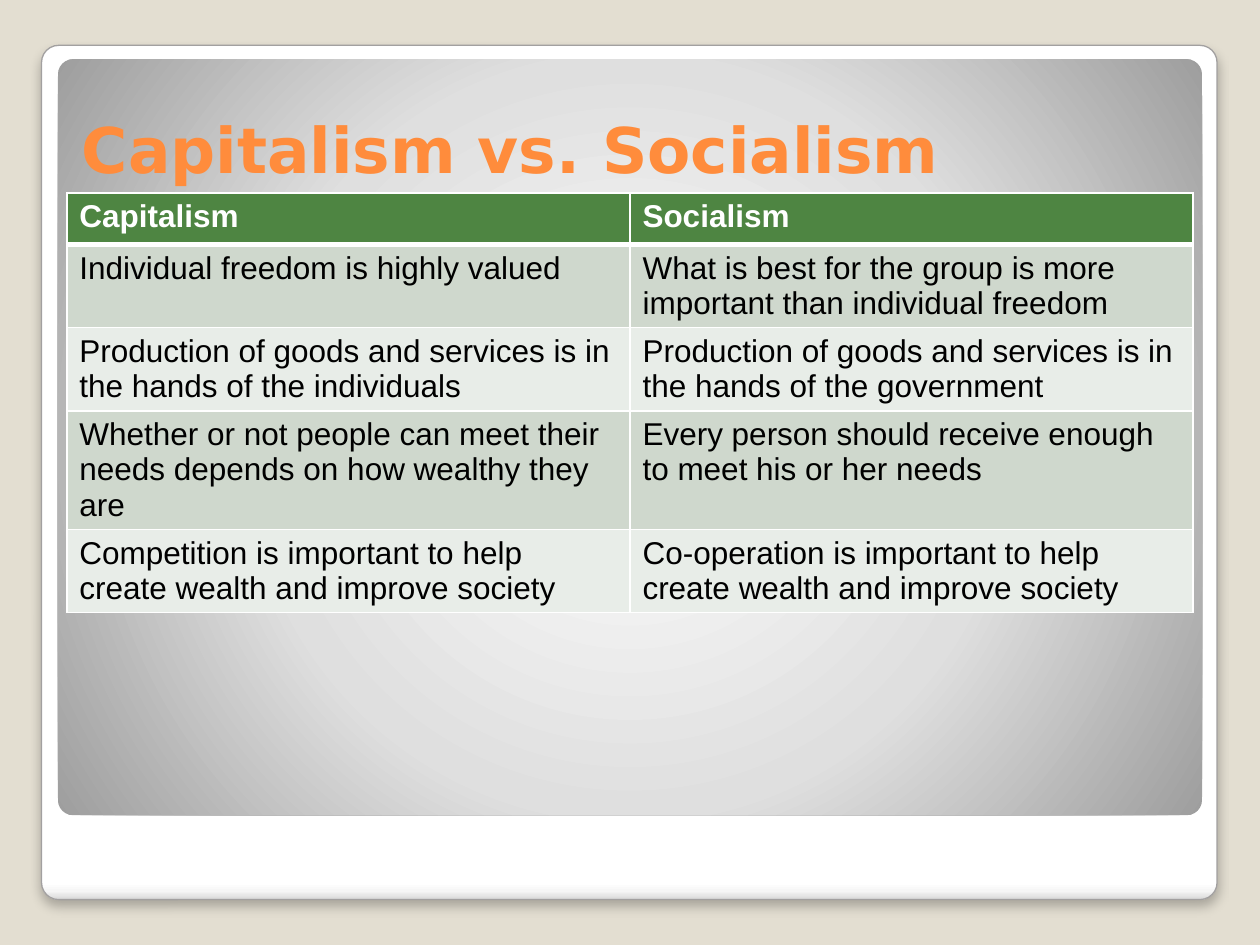
from lxml.etree import SubElement
from pptx import Presentation
from pptx.dml.color import RGBColor
from pptx.enum.shapes import MSO_SHAPE
from pptx.enum.text import MSO_ANCHOR, MSO_AUTO_SIZE, PP_ALIGN
from pptx.oxml.ns import qn
from pptx.util import Inches, Pt

BACKGROUND = RGBColor(0xE3, 0xDE, 0xD1)
FRAME_LINE = RGBColor(0xA2, 0xA0, 0xA0)
ORANGE = RGBColor(0xFF, 0x8C, 0x3C)
GREEN = RGBColor(0x4E, 0x85, 0x42)
DARK_BAND = RGBColor(0xCF, 0xD8, 0xCD)
LIGHT_BAND = RGBColor(0xE8, 0xED, 0xE8)
WHITE = RGBColor(0xFF, 0xFF, 0xFF)
BLACK = RGBColor(0, 0, 0)

TITLE = "Capitalism vs. Socialism"
ROWS = [
    ("Capitalism", "Socialism"),
    ("Individual freedom is highly valued",
     "What is best for the group is more important than individual freedom"),
    ("Production of goods and services is in the hands of the individuals",
     "Production of goods and services is in the hands of the government"),
    ("Whether or not people can meet their needs depends on how wealthy they are",
     "Every person should receive enough to meet his or her needs"),
    ("Competition is important to help create wealth and improve society",
     "Co-operation is important to help create wealth and improve society"),
]
FRAME_STOPS = [(0, "FFFFFF"), (98, "FFFFFF"), (99, "F6F6F6"), (100, "D8D8D8")]
PANEL_STOPS = [(0, "FFFFFF"), (55, "DFDFDF"), (100, "9E9E9E")]
COLUMN_WIDTH, ROW_HEIGHT = 4.47, 0.41


def add_element(parent, tag, **attributes):
    return SubElement(parent, qn(tag), {k: str(v) for k, v in attributes.items()})


def add_rounded_panel(slide, box, stops, radial=False):
    shape = slide.shapes.add_shape(MSO_SHAPE.ROUNDED_RECTANGLE, *map(Inches, box))
    shape.adjustments[0] = 0.02
    shape.shadow.inherit = False
    shape.line.fill.background()
    shape.fill.background()
    properties = shape._element.spPr
    gradient = add_element(properties, "a:gradFill", rotWithShape=1)
    properties.replace(properties.find(qn("a:noFill")), gradient)
    stop_list = add_element(gradient, "a:gsLst")
    for position, color in stops:
        stop = add_element(stop_list, "a:gs", pos=position * 1000)
        add_element(stop, "a:srgbClr", val=color)
    if radial:
        circle = add_element(gradient, "a:path", path="circle")
        add_element(circle, "a:fillToRect", **dict.fromkeys("ltrb", 50000))
    else:
        add_element(gradient, "a:lin", ang=90 * 60000, scaled=0)
    return shape


def add_drop_shadow(shape):
    effects = shape._element.spPr.find(qn("a:effectLst"))
    shadow = add_element(effects, "a:outerShdw", blurRad=Pt(6), dist=Pt(4),
                         dir=90 * 60000, algn="tl", rotWithShape=0)
    color = add_element(shadow, "a:srgbClr", val="000000")
    add_element(color, "a:alpha", val=25000)


def add_text(paragraph, text, font, size, color, bold):
    run = paragraph.add_run()
    run.text = text
    run.font.name = font
    run.font.size = Pt(size)
    run.font.color.rgb = color
    run.font.bold = bold


def set_borders(cell, widths):
    properties = cell._tc.get_or_add_tcPr()
    for index, (side, width) in enumerate(widths.items()):
        line = add_element(properties, f"a:ln{side}", w=Pt(width))
        fill = add_element(line, "a:solidFill")
        add_element(fill, "a:srgbClr", val=WHITE)
        properties.insert(index, line)


presentation = Presentation()
presentation.slide_width, presentation.slide_height = Inches(10), Inches(7.5)
slide = presentation.slides.add_slide(presentation.slide_layouts[5])
slide.background.fill.solid()
slide.background.fill.fore_color.rgb = BACKGROUND

frame = add_rounded_panel(slide, (0.33, 0.36, 9.33, 6.78), FRAME_STOPS)
frame.line.color.rgb = FRAME_LINE
frame.line.width = Pt(0.75)
add_drop_shadow(frame)
add_rounded_panel(slide, (0.46, 0.47, 9.08, 6), PANEL_STOPS, radial=True)

title = slide.shapes.title
slide.shapes._spTree.append(title._element)
title.left, title.top, title.width, title.height = map(Inches, (0.55, 0.38, 8.95, 1.15))
title.text_frame.auto_size = MSO_AUTO_SIZE.NONE
title.text_frame.vertical_anchor = MSO_ANCHOR.BOTTOM
paragraph = title.text_frame.paragraphs[0]
paragraph.alignment = PP_ALIGN.LEFT
add_text(paragraph, TITLE, "DejaVu Sans", 36, ORANGE, True)

table = slide.shapes.add_table(
    len(ROWS), 2, Inches(0.53), Inches(1.53),
    Inches(2 * COLUMN_WIDTH), Inches(len(ROWS) * ROW_HEIGHT)).table
for row_index, texts in enumerate(ROWS):
    header = row_index == 0
    band = GREEN if header else DARK_BAND if row_index % 2 else LIGHT_BAND
    for column_index, text in enumerate(texts):
        cell = table.cell(row_index, column_index)
        cell.fill.solid()
        cell.fill.fore_color.rgb = band
        set_borders(cell, {"L": 1, "R": 1, "T": 3 if row_index == 1 else 1,
                           "B": 3 if header else 1})
        add_text(cell.text_frame.paragraphs[0], text, "Arial", 18,
                 WHITE if header else BLACK, header)

presentation.save("out.pptx")
